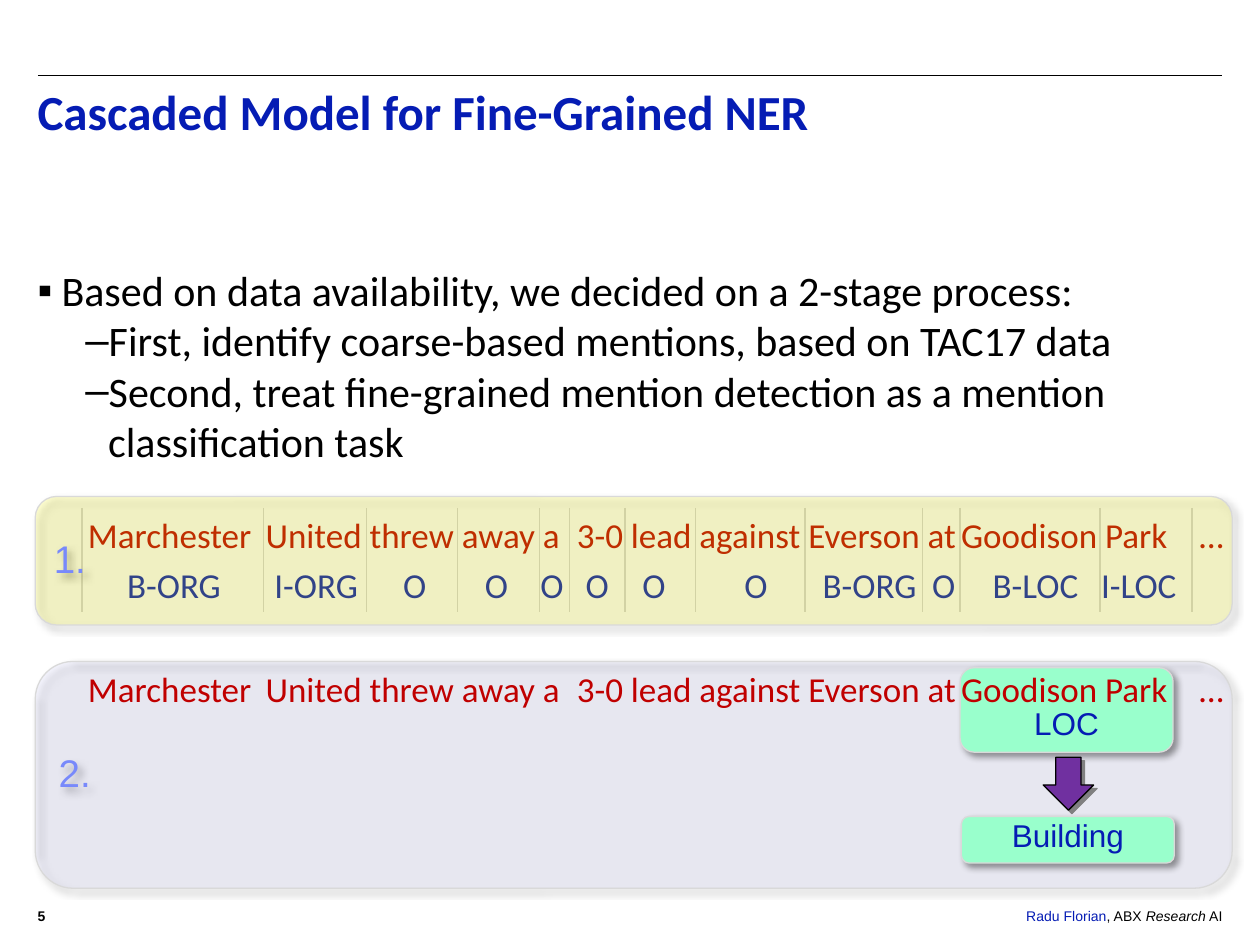
from pptx import Presentation
from pptx.dml.color import RGBColor
from pptx.enum.shapes import MSO_CONNECTOR, MSO_SHAPE as SHAPE
from pptx.enum.text import MSO_ANCHOR as ANCHOR, PP_ALIGN as ALIGN
from pptx.oxml import parse_xml
from pptx.oxml.ns import nsdecls, qn
from pptx.util import Emu, Pt

PX = 9144
BLUE, LILAC, MINT, GREY = "051CB4", "7889FB", "99FFCC", "D9D9D9"
WORDS = "Marchester\tUnited threw away a\t3-0 lead against Everson at\tGoodison Park\t…"
WORD_TABS = (141, 388, 693, 882)
TAGS = [("B-ORG", 91, 95), ("I-ORG", 208, 87), ("O", 310, 39), ("O", 375, 39),
        ("O", 419, 39), ("O", 455, 39), ("O", 500, 39), ("O", 581, 39),
        ("B-ORG", 643, 95), ("O", 730, 39), ("B-LOC", 778, 89), ("I-LOC", 864, 80)]
DIVIDERS = [65, 209, 291, 363, 428, 452, 496, 552, 639, 732, 762, 873, 946]


def px(n):
    return Emu(n * PX)


def rgb(color):
    return RGBColor.from_string(color)


def xml(tag, attrs="", inner=""):
    return parse_xml(f'<a:{tag} {nsdecls("a")} {attrs}>{inner}</a:{tag}>')


def write(p, *runs, size=18, font="Calibri", color="000000", bold=False,
          align=ALIGN.LEFT, spacing=None, bullet=None, indent=(0, 0), tabs=()):
    pPr = p._p.get_or_add_pPr()
    if bullet:
        pPr.set("marL", str(px(indent[0])))
        pPr.set("indent", str(px(indent[1])))
        pPr.append(xml("buClr", inner='<a:srgbClr val="000000"/>'))
        pPr.append(xml("buFont", 'typeface="Arial"'))
        pPr.append(xml("buChar", f'char="{bullet}"'))
    if tabs:
        stops = "".join(f'<a:tab pos="{px(t)}" algn="l"/>' for t in tabs)
        pPr.append(xml("tabLst", inner=stops))
    p.alignment = align
    if spacing:
        p.line_spacing = spacing
    for run in runs:
        text, look = (run, {}) if isinstance(run, str) else run
        r = p.add_run()
        r.text = text
        r.font.size, r.font.name = Pt(size), font
        r.font.bold, r.font.italic = bold, look.get("italic", False)
        r.font.color.rgb = rgb(look.get("color", color))


class Deck:
    """Holds the style and the current slide."""

    def __init__(self, prs):
        self.slide = prs.slides.add_slide(prs.slide_layouts[6])
        self.shapes = self.slide.shapes

    def text(self, box, *runs, wrap=True, **fmt):
        tf = self.shapes.add_textbox(*map(px, box)).text_frame
        tf.word_wrap = wrap
        if runs:
            write(tf.paragraphs[0], *runs, **fmt)
        return tf

    def line(self, x1, y1, x2, y2, color):
        c = self.shapes.add_connector(MSO_CONNECTOR.STRAIGHT, px(x1), px(y1), px(x2), px(y2))
        c.line.color.rgb, c.line.width = rgb(color), Pt(0.75)
        c._element.spPr.append(xml("effectLst"))

    def shape(self, kind, box, fill, text="", line=GREY, alpha=100, anchor=ANCHOR.MIDDLE,
              shadow=("000000", 40, 4, 3), **fmt):
        sp = self.shapes.add_shape(kind, *map(px, box))
        sp.shadow.inherit = False
        sp.fill.solid()
        sp.fill.fore_color.rgb = rgb(fill)
        sp.line.color.rgb, sp.line.width = rgb(line), Pt(0.75)
        spPr = sp._element.spPr
        if alpha < 100:
            clr = spPr.find(qn("a:solidFill")).find(qn("a:srgbClr"))
            clr.append(xml("alpha", f'val="{alpha * 1000}"'))
        color, opacity, blur, dist = shadow
        spPr.find(qn("a:effectLst")).append(xml(
            "outerShdw",
            f'blurRad="{Pt(blur)}" dist="{Pt(dist)}" dir="2700000" algn="tl" rotWithShape="0"',
            f'<a:srgbClr val="{color}"><a:alpha val="{opacity * 1000}"/></a:srgbClr>'))
        if text:
            tf = sp.text_frame
            tf.word_wrap, tf.vertical_anchor = True, anchor
            write(tf.paragraphs[0], text, font="Arial", spacing=0.9, **fmt)

    def panel(self, box, fill, text):
        self.shape(SHAPE.ROUNDED_RECTANGLE, box, fill, text, alpha=18, size=22, color=LILAC)

    def label(self, box, text):
        self.shape(SHAPE.ROUNDED_RECTANGLE, box, MINT, text, anchor=ANCHOR.BOTTOM,
                   color=BLUE, align=ALIGN.CENTER)

    def sentence(self, y):
        self.text((60, y, 930, 44), WORDS, size=20, color="C00000", tabs=WORD_TABS)

    def bullets(self, box, items):
        tf = self.text(box)
        for i, (text, bullet, indent) in enumerate(items):
            p = tf.add_paragraph() if i else tf.paragraphs[0]
            p.level = int(bullet == "–")
            write(p, text, size=24, bullet=bullet, indent=indent)


def main():
    prs = Presentation()
    prs.slide_width, prs.slide_height = px(1000), px(750)
    d = Deck(prs)

    d.line(30, 60, 970, 60, "000000")
    d.text((789, 715, 191, 20), ("Radu Florian", {"color": BLUE}), ", ABX ",
           ("Research", {"italic": True}), " AI", size=8, font="Arial", align=ALIGN.RIGHT)
    d.panel((28, 525, 950, 180), "CCCCFF", "2.")
    d.label((762, 530, 169, 67), "LOC")
    d.sentence(525)

    d.text((20, 65, 950, 70), "Cascaded Model for Fine-Grained NER",
           size=28, color=BLUE, bold=True, spacing=0.9)
    d.bullets((20, 205, 950, 177), [
        ("Based on data availability, we decided on a 2-stage process:", "▪", (19, -19)),
        ("First, identify coarse-based mentions, based on TAC17 data", "–", (56, -18)),
        ("Second, treat fine-grained mention detection as a mention classification task",
         "–", (56, -18))])
    d.text((20, 715, 40, 20), "5", size=8, font="Arial", bold=True)

    d.sentence(403)
    for tag, x, width in TAGS:
        d.text((x, 442, width, 44), tag, wrap=False, size=20, color=BLUE)
    for x in DIVIDERS:
        d.line(x, 403, x, 486, GREY)
    d.panel((28, 394, 950, 102), "FFFF00", "1.")

    d.shape(SHAPE.DOWN_ARROW, (828, 601, 40, 42), "7030A0", line="000000",
            shadow=("808080", 100, 0, 2.8))
    d.label((763, 648, 169, 37), "Building")
    prs.save("out.pptx")


if __name__ == "__main__":
    main()
